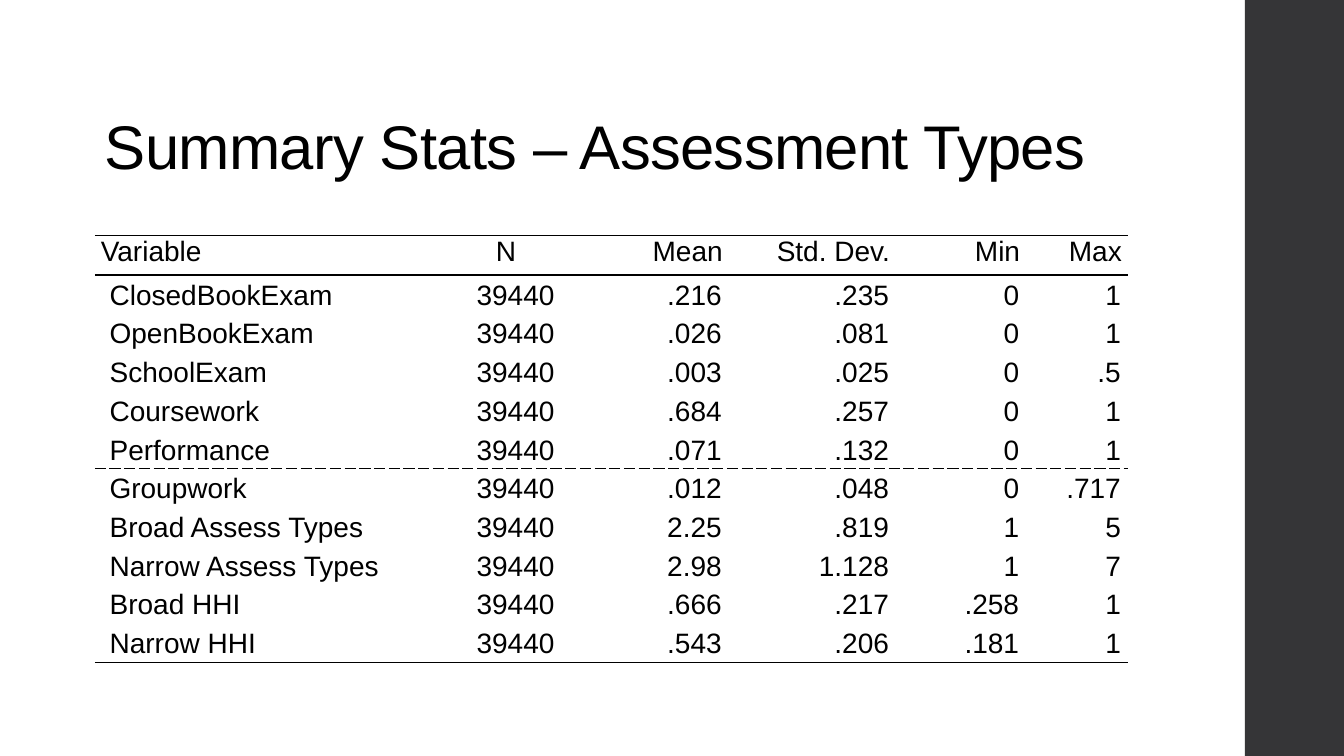
from dataclasses import dataclass

from lxml import etree
from pptx import Presentation
from pptx.dml.color import RGBColor
from pptx.enum.shapes import MSO_SHAPE
from pptx.enum.text import MSO_ANCHOR, PP_ALIGN
from pptx.oxml.ns import qn
from pptx.util import Pt

RECT = MSO_SHAPE.RECTANGLE
BOTTOM = MSO_ANCHOR.BOTTOM
LEFT, CENTER, RIGHT = PP_ALIGN.LEFT, PP_ALIGN.CENTER, PP_ALIGN.RIGHT


@dataclass(frozen=True)
class Theme:
    font: str = "Arial"
    ink: str = "000000"
    sidebar: str = "353537"
    title_size: float = 44
    table_size: float = 20


@dataclass(frozen=True)
class Column:
    heading: str
    width: float
    heading_align: PP_ALIGN = RIGHT
    align: PP_ALIGN = RIGHT


@dataclass(frozen=True)
class Stat:
    variable: str
    mean: str
    sd: str
    low: str
    high: str
    n: str = "39440"

    def values(self) -> tuple:
        return self.variable, self.n, self.mean, self.sd, self.low, self.high


@dataclass(frozen=True)
class Rule:
    width: float
    dash: str = "solid"


THEME = Theme()
COLUMNS = [
    Column("Variable", 254.2, LEFT, LEFT),
    Column("N", 79.2, CENTER),
    Column("Mean", 119.5),
    Column("Std. Dev.", 119.5),
    Column("Min", 92.9),
    Column("Max", 72.7),
]
STATS = [
    Stat("ClosedBookExam", ".216", ".235", "0", "1"),
    Stat("OpenBookExam", ".026", ".081", "0", "1"),
    Stat("SchoolExam", ".003", ".025", "0", ".5"),
    Stat("Coursework", ".684", ".257", "0", "1"),
    Stat("Performance", ".071", ".132", "0", "1"),
    Stat("Groupwork", ".012", ".048", "0", ".717"),
    Stat("Broad Assess Types", "2.25", ".819", "1", "5"),
    Stat("Narrow Assess Types", "2.98", "1.128", "1", "7"),
    Stat("Broad HHI", ".666", ".217", ".258", "1"),
    Stat("Narrow HHI", ".543", ".206", ".181", "1"),
]
# Each key is the index of the row directly below the rule.
RULES = {0: Rule(1), 1: Rule(1.5), 6: Rule(1, "sysDash"), 11: Rule(1)}
HEADER_HEIGHT, ROW_HEIGHT, FOOTER_HEIGHT = 28.1, 24.5, 12.2
TABLE_HEIGHT = 304.6
HEADER_INSET, BODY_INSET, LABEL_INSET = 4.3, 5, 10.6


def write(tf, text: str, *, size: float, align=LEFT, line_spacing=None,
          space_after=None, tracking=None) -> None:
    p = tf.paragraphs[0]
    p.alignment = align
    if line_spacing is not None:
        p.line_spacing = line_spacing
    if space_after is not None:
        p.space_after = Pt(space_after)
    r = p.add_run()
    r.text = text
    r.font.name = THEME.font
    r.font.size = Pt(size)
    r.font.color.rgb = RGBColor.from_string(THEME.ink)
    if tracking is not None:
        r.font._element.set("spc", str(round(tracking * 100)))


def set_borders(cell, top: Rule | None, bottom: Rule | None) -> None:
    """Write all four edges, so that the table style adds none."""
    tc_pr = cell._tc.get_or_add_tcPr()
    edges = (("a:lnL", None), ("a:lnR", None), ("a:lnT", top), ("a:lnB", bottom))
    for i, (tag, rule) in enumerate(edges):
        ln = etree.Element(qn(tag))
        if rule is None:
            etree.SubElement(ln, qn("a:noFill"))
        else:
            ln.set("w", str(Pt(rule.width)))
            fill = etree.SubElement(ln, qn("a:solidFill"))
            etree.SubElement(fill, qn("a:srgbClr"), val=THEME.ink)
            etree.SubElement(ln, qn("a:prstDash"), val=rule.dash)
        tc_pr.insert(i, ln)


def add_sidebar(s) -> None:
    sp = s.shapes.add_shape(RECT, Pt(889.2), Pt(0), Pt(72), Pt(540))
    sp.shadow.inherit = False
    sp.fill.solid()
    sp.fill.fore_color.rgb = RGBColor.from_string(THEME.sidebar)
    sp.line.fill.background()


def add_title(s, text: str) -> None:
    tf = s.shapes.add_textbox(Pt(67.7), Pt(29.5), Pt(763.2), Pt(104.4)).text_frame
    tf.word_wrap = True
    tf.vertical_anchor = BOTTOM
    write(tf, text, size=THEME.title_size, line_spacing=0.9, tracking=-0.5)


def add_stats_table(s) -> None:
    heights = [HEADER_HEIGHT] + [ROW_HEIGHT] * len(STATS) + [FOOTER_HEIGHT]
    width = sum(c.width for c in COLUMNS)
    frame = s.shapes.add_table(len(heights), len(COLUMNS), Pt(67.7), Pt(168.5),
                               Pt(width), Pt(TABLE_HEIGHT))
    table = frame.table
    table.first_row = table.horz_banding = False
    for col, column in zip(table.columns, COLUMNS):
        col.width = Pt(column.width)
    for row, height in zip(table.rows, heights):
        row.height = Pt(height)
    frame.height = Pt(TABLE_HEIGHT)

    for i, row in enumerate(table.rows):
        for cell in row.cells:
            cell.margin_top = cell.margin_bottom = Pt(0)
            cell.margin_left = cell.margin_right = Pt(BODY_INSET if i else HEADER_INSET)
            cell.fill.background()
            set_borders(cell, RULES.get(i), RULES.get(i + 1))

    for cell, column in zip(table.rows[0].cells, COLUMNS):
        write(cell.text_frame, column.heading, size=THEME.table_size,
              align=column.heading_align)
    for i, stat in enumerate(STATS, start=1):
        table.cell(i, 0).margin_left = Pt(LABEL_INSET)
        for cell, column, value in zip(table.rows[i].cells, COLUMNS, stat.values()):
            write(cell.text_frame, value, size=THEME.table_size, align=column.align,
                  line_spacing=1.15, space_after=8)

    last = len(heights) - 1
    table.cell(last, 0).merge(table.cell(last, len(COLUMNS) - 1))


def main() -> None:
    prs = Presentation()
    prs.slide_width, prs.slide_height = Pt(960), Pt(540)
    s = prs.slides.add_slide(prs.slide_layouts[6])
    add_sidebar(s)
    add_title(s, "Summary Stats – Assessment Types")
    add_stats_table(s)
    prs.save("out.pptx")


if __name__ == "__main__":
    main()
